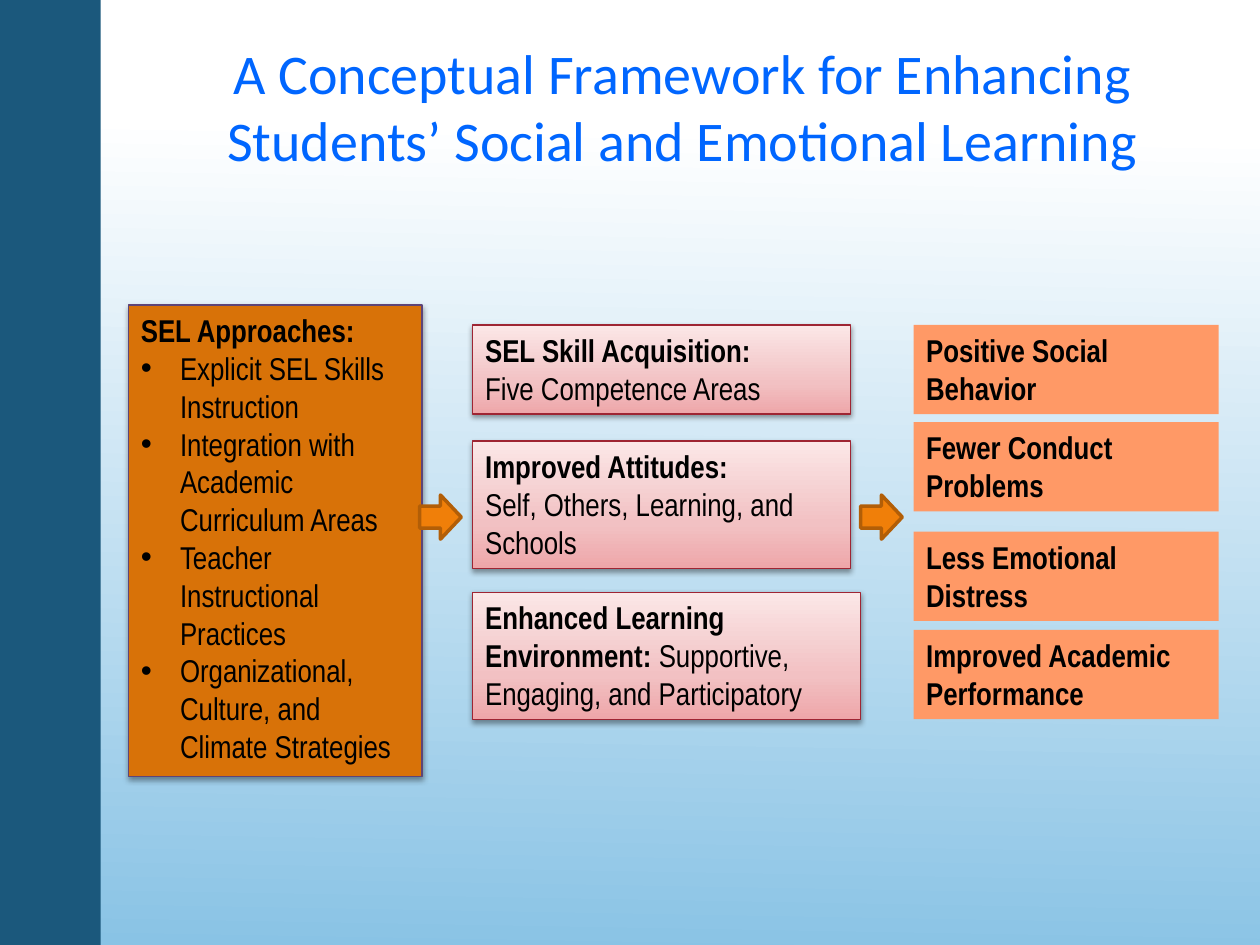
"""Build the slide on the social and emotional learning framework."""
from lxml import etree
from pptx import Presentation
from pptx.dml.color import RGBColor
from pptx.enum.shapes import MSO_SHAPE
from pptx.enum.text import MSO_ANCHOR, MSO_AUTO_SIZE, PP_ALIGN
from pptx.oxml.ns import qn
from pptx.util import Cm, Pt

RECT, ARROW = MSO_SHAPE.RECTANGLE, MSO_SHAPE.RIGHT_ARROW
TOP, BOTTOM = MSO_ANCHOR.TOP, MSO_ANCHOR.BOTTOM
LEFT, CENTER = PP_ALIGN.LEFT, PP_ALIGN.CENTER
GROW, FIXED = MSO_AUTO_SIZE.SHAPE_TO_FIT_TEXT, MSO_AUTO_SIZE.NONE

SKY = [(0, "89C3E5"), (86, "FFFFFF")]
ROSE = [(0, "EEA6A9"), (35, "F2C1C3"), (100, "FBE7E7")]

METHODS = [
    [("SEL Approaches:", True)],
    [("Explicit SEL Skills Instruction", False)],
    [("Integration with Academic Curriculum Areas", False)],
    [("Teacher Instructional Practices", False)],
    [("Organizational, Culture, and Climate Strategies", False)],
]
GAINS = [
    (6.55, 7.62, 1.8, [[("SEL Skill Acquisition:", True)],
                       [("Five Competence Areas", False)]]),
    (8.89, 7.62, 2.57, [[("Improved Attitudes:", True)],
                        [("Self, Others, Learning, and Schools", False)]]),
    (11.94, 7.82, 2.57, [[("Enhanced Learning Environment: ", True),
                          ("Supportive, Engaging, and Participatory", False)]]),
]
RESULTS = [
    (6.55, "Positive Social Behavior"),
    (8.51, "Fewer Conduct Problems"),
    (10.72, "Less Emotional Distress"),
    (12.7, "Improved Academic Performance"),
]


def color(code):
    """Turn a hex string into a colour."""
    return RGBColor.from_string(code)


def blend(fill, root, stops, angle):
    """Fill with a linear gradient, its angle counted anticlockwise."""
    fill.gradient()
    fill.gradient_angle = angle
    items = next(root.iter(qn("a:gsLst")))
    for item in list(items):
        items.remove(item)
    for place, code in stops:
        item = etree.SubElement(items, qn("a:gs"), pos=str(place * 1000))
        etree.SubElement(item, qn("a:srgbClr"), val=code)


def shade(shape):
    """Cast a soft shadow below a shape."""
    effects = shape._element.spPr.find(qn("a:effectLst"))
    outer = etree.SubElement(effects, qn("a:outerShdw"), blurRad=str(Pt(3.1)),
                             dist=str(Pt(1.6)), dir="5400000", rotWithShape="0")
    black = etree.SubElement(outer, qn("a:srgbClr"), val="000000")
    etree.SubElement(black, qn("a:alpha"), val="38000")


def add_box(slide, kind, place, fill, line=None, width=0.75):
    """Add a preset shape with a plain or gradient fill."""
    shape = slide.shapes.add_shape(kind, *map(Cm, place))
    shape.shadow.inherit = False
    if isinstance(fill, str):
        shape.fill.solid()
        shape.fill.fore_color.rgb = color(fill)
    else:
        blend(shape.fill, shape._element, fill, 90)
    if line:
        shape.line.color.rgb = color(line)
        shape.line.width = Pt(width)
    else:
        shape.line.fill.background()
    return shape


def add_bullet(para):
    """Give a paragraph a round bullet and a hanging indent."""
    props = para._p.get_or_add_pPr()
    props.set("marL", str(Cm(0.79)))
    props.set("indent", str(Cm(-0.79)))
    etree.SubElement(props, qn("a:buFont"), typeface="Arial")
    etree.SubElement(props, qn("a:buChar"), char="•")


def write(shape, paras, listed=False):
    """Write paragraphs of (text, bold) runs, with bullets after the first."""
    frame = shape.text_frame
    frame.word_wrap = True
    frame.auto_size = GROW
    frame.vertical_anchor = TOP
    for index, runs in enumerate(paras):
        para = frame.add_paragraph() if index else frame.paragraphs[0]
        para.alignment = LEFT
        if listed and index:
            add_bullet(para)
        for text, bold in runs:
            run = para.add_run()
            run.text = text
            run.font.name = "Arial Narrow"
            run.font.size = Pt(18)
            run.font.bold = bold
            run.font.color.rgb = color("000000")


def set_title(slide, text):
    """Place and format the title."""
    title = slide.shapes.title
    title.left, title.top = Cm(3.18), Cm(0.43)
    title.width, title.height = Cm(21.16), Cm(3.18)
    frame = title.text_frame
    frame.text = text
    frame.auto_size = FIXED
    frame.vertical_anchor = BOTTOM
    para = frame.paragraphs[0]
    para.alignment = CENTER
    font = para.runs[0].font
    font.name, font.size = "Calibri", Pt(32)
    font.color.rgb = color("0066FF")


def main():
    """Build and save the slide."""
    deck = Presentation()
    deck.slide_width, deck.slide_height = Cm(25.4), Cm(19.05)
    slide = deck.slides.add_slide(deck.slide_layouts[5])
    blend(slide.background.fill, slide._element, SKY, 89)
    add_box(slide, RECT, (0, 0, 2.03, 19.05), "1B587C")
    set_title(slide, "A Conceptual Framework for Enhancing "
                     "Students’ Social and Emotional Learning")

    panel = add_box(slide, RECT, (2.59, 6.15, 5.92, 9.5), "D87208", "5E4577")
    shade(panel)
    write(panel, METHODS, listed=True)
    for top, width, height, paras in GAINS:
        card = add_box(slide, RECT, (9.53, top, width, height), ROSE, "9E2533")
        shade(card)
        write(card, paras)
    for top, text in RESULTS:
        card = add_box(slide, RECT, (18.42, top, 6.15, 1.8), "FF9966")
        write(card, [[(text, True)]])
    for left in (8.46, 17.35):
        add_box(slide, ARROW, (left, 9.98, 0.84, 0.89), "F07F09", "B25E07", 2)
    deck.save("out.pptx")


if __name__ == "__main__":
    main()
